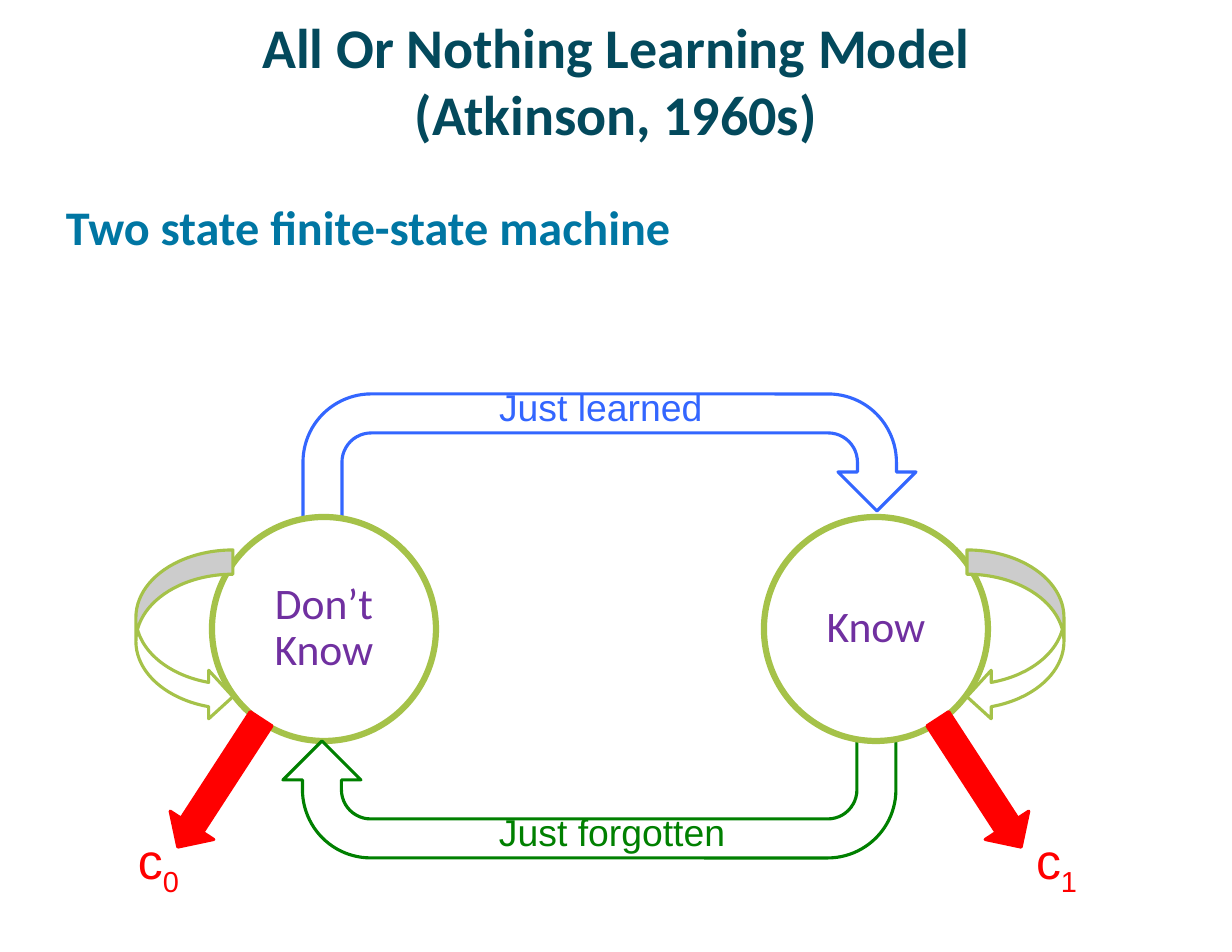
from pptx import Presentation
from pptx.dml.color import RGBColor
from pptx.enum.shapes import MSO_SHAPE
from pptx.enum.text import MSO_ANCHOR, MSO_AUTO_SIZE, PP_ALIGN
from pptx.util import Emu, Pt

UTURN = MSO_SHAPE.U_TURN_ARROW
OVAL = MSO_SHAPE.OVAL
CURVED = MSO_SHAPE.CURVED_LEFT_ARROW
ARROW = MSO_SHAPE.RIGHT_ARROW
CENTER = PP_ALIGN.CENTER
MIDDLE = MSO_ANCHOR.MIDDLE
GROW = MSO_AUTO_SIZE.SHAPE_TO_FIT_TEXT

NAVY = RGBColor(0x03, 0x49, 0x5C)
TEAL = RGBColor(0x00, 0x76, 0xA3)
BLUE = RGBColor(0x33, 0x66, 0xFF)
GREEN = RGBColor(0x00, 0x80, 0x00)
LIME = RGBColor(0xA5, 0xC2, 0x49)
PURPLE = RGBColor(0x70, 0x30, 0xA0)
RED = RGBColor(0xFF, 0x00, 0x00)
WHITE = RGBColor(0xFF, 0xFF, 0xFF)

SCALE = 914400 / 112


def px(n):
    return Emu(round(n * SCALE))


def style_runs(p, size, color, font, bold=False):
    for r in p.runs:
        r.font.size = Pt(size)
        r.font.name = font
        r.font.bold = bold
        r.font.color.rgb = color


def add_heading(slide, text, box, size, color, left_inset=12):
    tf = slide.shapes.add_textbox(*map(px, box)).text_frame
    tf.word_wrap = True
    tf.margin_left, tf.margin_right = px(left_inset), px(12)
    tf.margin_top = tf.margin_bottom = px(7)
    tf.text = text
    style_runs(tf.paragraphs[0], size, color, "Calibri", bold=True)
    return tf


def add_figure(slide, kind, box, line, width=2, fill=WHITE, flip="", rotation=0):
    sp = slide.shapes.add_shape(kind, *map(px, box))
    sp.shadow.inherit = False
    sp.fill.solid()
    sp.fill.fore_color.rgb = fill
    sp.line.color.rgb = line
    sp.line.width = Pt(width)
    sp.rotation = rotation
    for axis in flip:
        sp._element.spPr.xfrm.set("flip" + axis, "1")
    return sp


def add_state(slide, text, left):
    sp = add_figure(slide, OVAL, (left, 517, 224, 224), LIME, width=4)
    tf = sp.text_frame
    tf.word_wrap = True
    tf.vertical_anchor = MIDDLE
    tf.text = text
    p = tf.paragraphs[0]
    p.alignment = CENTER
    p.line_spacing = 0.87
    style_runs(p, 28, PURPLE, "Calibri")


def add_label(slide, text, box, size, color, subscript="", wrap=False):
    tf = slide.shapes.add_textbox(*map(px, box)).text_frame
    tf.word_wrap = wrap
    tf.auto_size = GROW
    tf.text = text
    p = tf.paragraphs[0]
    p.line_spacing = 0.87
    if subscript:
        r = p.add_run()
        r.text = subscript
        r.font._element.set("baseline", "-25000")
    style_runs(p, size, color, "Arial")


def main():
    prs = Presentation()
    prs.slide_width, prs.slide_height = px(1232), px(952)
    slide = prs.slides.add_slide(prs.slide_layouts[6])

    title = add_heading(slide, "All Or Nothing Learning Model\v(Atkinson, 1960s)",
                        (62, 21, 1108, 117), 36, NAVY)
    title.vertical_anchor = MIDDLE
    title.paragraphs[0].alignment = CENTER
    add_heading(slide, "Two state finite-state machine",
                (41, 190, 1129, 660), 31, TEAL, left_inset=25)

    add_figure(slide, UTURN, (303, 394, 613, 156), BLUE)
    add_state(slide, "Don’t Know", 212)
    add_figure(slide, UTURN, (283, 702, 613, 156), GREEN, flip="HV")
    add_state(slide, "Know", 764)
    add_label(slide, "Just learned", (488, 385, 228, 52), 24, BLUE)
    add_label(slide, "Just forgotten", (488, 810, 251, 52), 24, GREEN)

    sides = [(967, 903, "", 57, "1", 1025), (136, 143, "H", 303, "0", 127)]
    for loop_left, arrow_left, flip, angle, index, label_left in sides:
        add_figure(slide, CURVED, (loop_left, 550, 97, 171), LIME, flip=flip)
        add_figure(slide, ARROW, (arrow_left, 757, 153, 52), RED, fill=RED,
                   flip=flip, rotation=angle)
        add_label(slide, "c", (label_left, 827, 76, 65), 32, RED,
                  subscript=index, wrap=True)

    prs.save("out.pptx")


if __name__ == "__main__":
    main()
